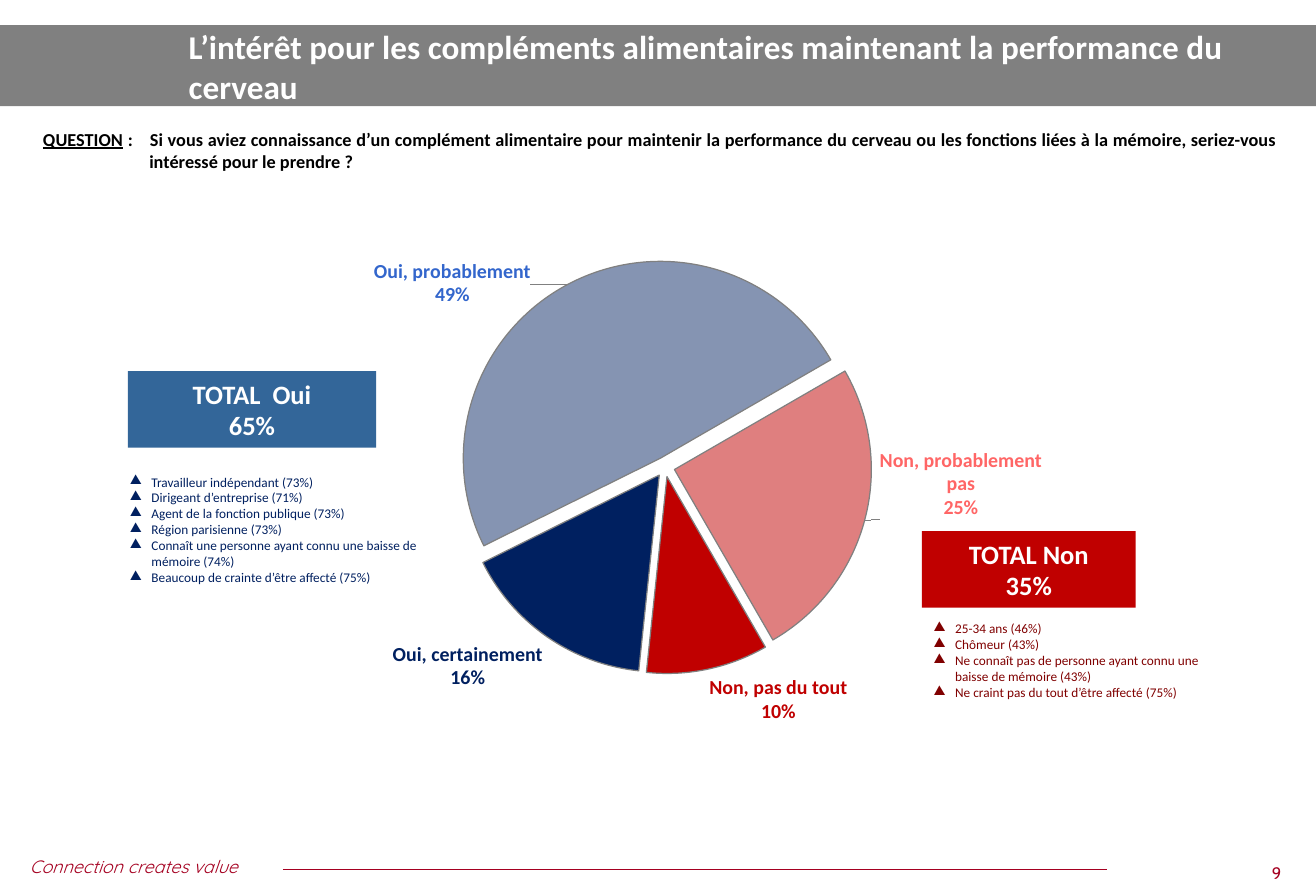
from lxml.etree import SubElement
from pptx import Presentation
from pptx.chart.data import CategoryChartData
from pptx.dml.color import RGBColor
from pptx.enum.chart import XL_CHART_TYPE as ChartType, XL_LABEL_POSITION as LabelPosition
from pptx.enum.shapes import MSO_CONNECTOR as Connector, MSO_SHAPE as Shape
from pptx.enum.text import MSO_ANCHOR as Anchor, MSO_AUTO_SIZE as AutoSize, PP_ALIGN as Align
from pptx.oxml.ns import qn
from pptx.util import Pt

PX = 9144
WHITE = RGBColor(0xFF, 0xFF, 0xFF)
BLACK = RGBColor(0, 0, 0)
GREY = RGBColor(0x80, 0x80, 0x80)
CRIMSON = RGBColor(0xA5, 0x00, 0x21)
NAVY = RGBColor(0x00, 0x20, 0x60)
BLUE = RGBColor(0x33, 0x66, 0xCC)
STEEL = RGBColor(0x33, 0x66, 0x99)
RED = RGBColor(0xC0, 0x00, 0x00)
ROSE = RGBColor(0xFF, 0x66, 0x66)
MAROON = RGBColor(0x80, 0x00, 0x00)

TITLE = "L’intérêt pour les compléments alimentaires maintenant la performance du cerveau"
QUESTION = (
    "QUESTION",
    " :\tSi vous aviez connaissance d’un complément alimentaire pour maintenir la performance "
    "du cerveau ou les fonctions liées à la mémoire, seriez-vous intéressé pour le prendre ?",
)
SLOGAN = "Connection creates value"
PAGE = "9"
ANSWERS = [
    ("Oui, certainement", 0.16, NAVY, 100, NAVY, None),
    ("Oui, probablement", 0.49, NAVY, 48, BLUE, (-0.04, 0.05)),
    ("Non, probablement pas", 0.25, RED, 50, ROSE, (0.01, -0.13)),
    ("Non, pas du tout", 0.1, RED, 100, RED, None),
]
TOTALS = [
    (("TOTAL  Oui", "65%"), STEEL, (107, 311, 208, 64)),
    (("TOTAL Non", "35%"), RED, (772, 445, 179, 64)),
]
PROFILES = [
    ((
        "Travailleur indépendant (73%)",
        "Dirigeant d’entreprise (71%)",
        "Agent de la fonction publique (73%)",
        "Région parisienne (73%)",
        "Connaît une personne ayant connu une baisse de mémoire (74%)",
        "Beaucoup de crainte d’être affecté (75%)",
    ), NAVY, (99, 392, 290, 104)),
    ((
        "25-34 ans (46%)",
        "Chômeur (43%)",
        "Ne connaît pas de personne ayant connu une baisse de mémoire (43%)",
        "Ne craint pas du tout d’être affecté (75%)",
    ), MAROON, (772, 515, 260, 77)),
]


def px(*lengths):
    return [length * PX for length in lengths]


def style(font, size, color, face="Calibri", bold=False):
    font.size, font.name, font.bold = Pt(size), face, bold
    font.color.rgb = color


def hang(paragraph, indent):
    properties = paragraph._p.get_or_add_pPr()
    properties.set("marL", str(indent * PX))
    properties.set("indent", str(-indent * PX))
    return properties


def write(frame, lines, size, color, face="Calibri", bold=False, align=Align.LEFT, bullet=None):
    frame.word_wrap = True
    for i, line in enumerate(lines):
        paragraph = frame.add_paragraph() if i else frame.paragraphs[0]
        paragraph.alignment = align
        if bullet:
            SubElement(hang(paragraph, 18), qn("a:buChar"), char=bullet)
        run = paragraph.add_run()
        run.text = line
        style(run.font, size, color, face, bold)


def add_block(box, color):
    block = slide.shapes.add_shape(Shape.RECTANGLE, *px(*box))
    block.shadow.inherit = False
    block.fill.solid()
    block.fill.fore_color.rgb = color
    block.line.fill.background()
    return block


def add_text(box, lines, size, color, **options):
    frame = slide.shapes.add_textbox(*px(*box)).text_frame
    write(frame, lines, size, color, **options)
    return frame


def make_layout(**values):
    layout = SubElement(plot_area, qn("c:layout"))
    manual = SubElement(layout, qn("c:manualLayout"))
    for tag, value in values.items():
        SubElement(manual, qn("c:" + tag), val=str(value))
    return layout


deck = Presentation()
deck.slide_width, deck.slide_height = px(1102, 748)
slide = deck.slides.add_slide(deck.slide_layouts[5])

band = add_block((0, 21, 1102, 68), GREY)
slide.shapes._spTree.insert(2, band._element)
title = slide.shapes.title
title.left, title.top, title.width, title.height = px(148, 22, 949, 67)
title.text_frame.auto_size = AutoSize.NONE
title.text_frame.vertical_anchor = Anchor.MIDDLE
write(title.text_frame, [TITLE], 20, WHITE, bold=True)

slogan = add_text((15, 712, 312, 34), [SLOGAN], 10.8, CRIMSON, face="Quicksand")
slogan.paragraphs[0].runs[0].font.italic = True
rule = slide.shapes.add_connector(Connector.STRAIGHT, *px(237, 728, 927, 728))
rule.line.color.rgb = CRIMSON
rule.line.width = Pt(0.75)
SubElement(rule._element.spPr, qn("a:effectLst"))
add_text((1036, 718, 66, 27), [PAGE], 10, CRIMSON, face="Cabin", align=Align.CENTER)

data = CategoryChartData(number_format="0%")
data.categories = [answer[0] for answer in ANSWERS]
data.add_series("Series 1", [answer[1] for answer in ANSWERS])
chart = slide.shapes.add_chart(ChartType.PIE, *px(236, 172, 690, 476), data).chart
chart.has_legend = False
chart.has_title = False
style(chart.font, 18, BLACK, "DejaVu Sans")
pie = chart.plots[0]
pie.vary_by_categories = True
interest = pie.series[0]
plot_area = pie._element.getparent()
for old in plot_area.findall(qn("c:layout")):
    plot_area.remove(old)
plot_area.insert(0, make_layout(layoutTarget="inner", xMode="edge", yMode="edge",
                                x=0.214, y=0.096, w=0.502, h=0.729))
for old in pie._element.findall(qn("c:firstSliceAng")):
    pie._element.remove(old)
SubElement(pie._element, qn("c:firstSliceAng"), val="186")
interest.format.line.color.rgb = GREY
explosion = SubElement(interest._element, qn("c:explosion"), val="5")
interest._element.find(qn("c:spPr")).addnext(explosion)

for i, (_, _, color, opacity, label_color, shift) in enumerate(ANSWERS):
    wedge = interest.points[i]
    wedge.format.fill.solid()
    wedge.format.fill.fore_color.rgb = color
    wedge.format.line.color.rgb = GREY
    wedge.format.line.width = Pt(0.75)
    if opacity < 100:
        tint = interest._element.findall(qn("c:dPt"))[i].find(".//" + qn("a:srgbClr"))
        SubElement(tint, qn("a:alpha"), val=str(opacity * 1000))
    style(wedge.data_label.font, 12, label_color, bold=True)
    wedge.data_label.position = LabelPosition.OUTSIDE_END
    label = interest._element.findall(".//" + qn("c:dLbl"))[i]
    label.find(qn("c:showCatName")).set("val", "1")
    SubElement(label, qn("c:separator")).text = "\n"
    if shift:
        label.find(qn("c:idx")).addnext(make_layout(x=shift[0], y=shift[1]))

for lines, color, box in PROFILES:
    add_text(box, lines, 8, color, bullet="▲")
for lines, color, box in TOTALS:
    write(add_block(box, color).text_frame, lines, 16, WHITE, bold=True, align=Align.CENTER)

question = slide.shapes.add_table(2, 1, *px(26, 103, 1054, 74)).table
question.first_row = question.horz_banding = False
for row, height in zip(question.rows, (46, 28)):
    row.height = height * PX
    row.cells[0].fill.background()
    row.cells[0].vertical_anchor = Anchor.MIDDLE
question.cell(1, 0).text_frame.paragraphs[0].font.size = Pt(8)
wording = question.cell(0, 0).text_frame.paragraphs[0]
wording.alignment = Align.JUSTIFY
hang(wording, 89)
for part in QUESTION:
    run = wording.add_run()
    run.text = part
    style(run.font, 11, BLACK, bold=True)
    run.font.underline = part == QUESTION[0]

deck.save("out.pptx")
